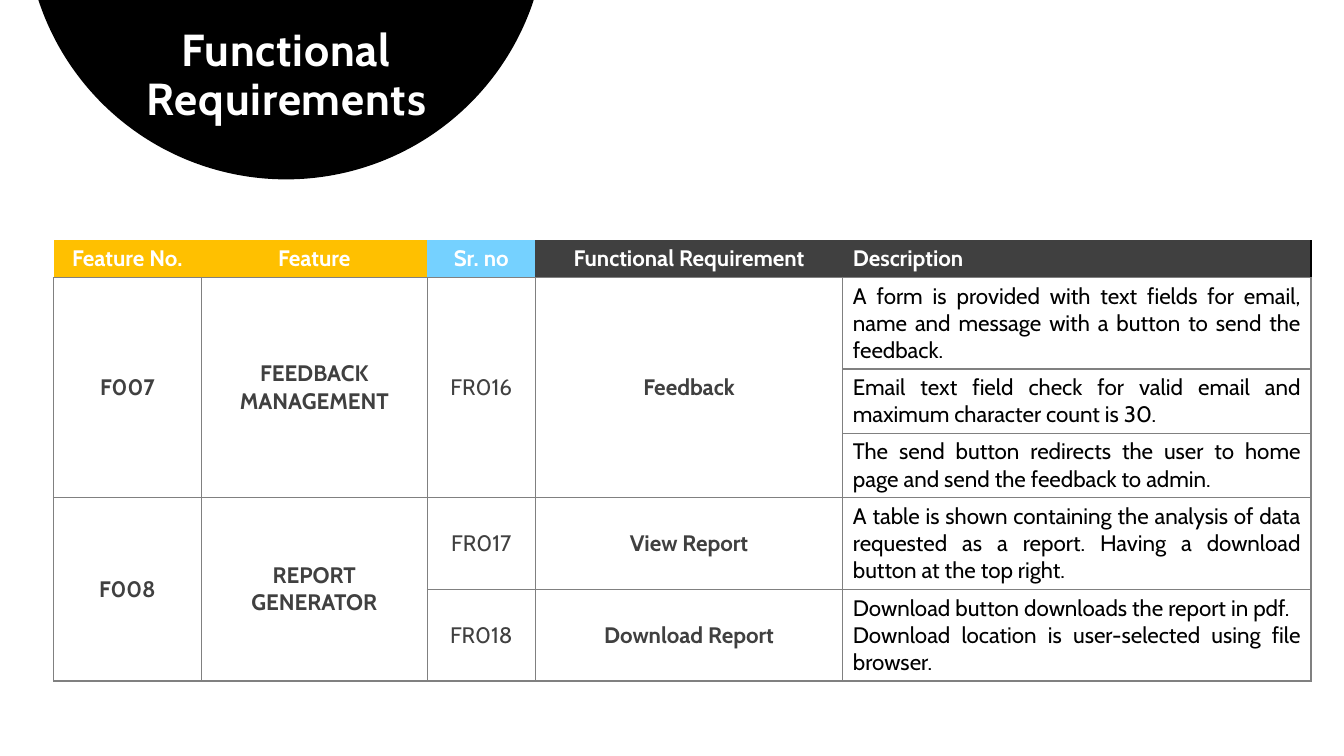
from dataclasses import dataclass

from lxml import etree
from pptx import Presentation
from pptx.dml.color import RGBColor
from pptx.enum.shapes import MSO_SHAPE
from pptx.enum.text import MSO_ANCHOR, PP_ALIGN
from pptx.oxml.ns import qn
from pptx.util import Cm, Pt

OVAL = MSO_SHAPE.OVAL
TOP, MIDDLE = MSO_ANCHOR.TOP, MSO_ANCHOR.MIDDLE
CENTER, JUSTIFY = PP_ALIGN.CENTER, PP_ALIGN.JUSTIFY

FONT = "Cabin"
BLACK, WHITE, GREY = "000000", "FFFFFF", "808080"
AMBER, SKY, CHARCOAL = "FFC000", "75D1FF", "404040"

COLUMN_WIDTHS = (3.72, 5.7, 2.72, 7.75, 11.8)
ROW_HEIGHTS = (0.94, 2.31, 1.62, 1.62, 2.31, 2.31)
TABLE_LEFT, TABLE_TOP = 1.35, 6.05
DESCRIPTION_COLUMN = len(COLUMN_WIDTHS) - 1


@dataclass(frozen=True)
class Look:
    color: str
    bold: bool
    align: PP_ALIGN = CENTER
    size: int = 16


@dataclass(frozen=True)
class Entry:
    row: int
    column: int
    text: str
    look: Look
    row_span: int = 1


HEADING = Look(WHITE, True)
LABEL = Look(CHARCOAL, True)
SERIAL = Look(CHARCOAL, False)
DESCRIPTION = Look(BLACK, False, JUSTIFY)
TITLE = Look(WHITE, True, size=32)

HEADINGS = (
    ("Feature No.", AMBER),
    ("Feature", AMBER),
    ("Sr. no", SKY),
    ("Functional Requirement", CHARCOAL),
    ("Description", CHARCOAL),
)
REQUIREMENTS = (
    Entry(1, 0, "F007", LABEL, 3),
    Entry(1, 1, "FEEDBACK MANAGEMENT", LABEL, 3),
    Entry(1, 2, "FR016", SERIAL, 3),
    Entry(1, 3, "Feedback", LABEL, 3),
    Entry(4, 0, "F008", LABEL, 2),
    Entry(4, 1, "REPORT GENERATOR", LABEL, 2),
    Entry(4, 2, "FR017", SERIAL),
    Entry(4, 3, "View Report", LABEL),
    Entry(5, 2, "FR018", SERIAL),
    Entry(5, 3, "Download Report", LABEL),
)
DESCRIPTIONS = (
    "A form is provided with text fields for email, name and message "
    "with a button to send the feedback.",
    "Email text field check for valid email and maximum character count is 30.",
    "The send button redirects the user to home page and send the feedback to admin.",
    "A table is shown containing the analysis of data requested as a report. "
    "Having a download button at the top right.",
    "Download button downloads the report in pdf.\n"
    "Download location is user-selected using file browser.",
)


def rgb(value: str) -> RGBColor:
    return RGBColor.from_string(value)


def write(frame, text: str, look: Look) -> None:
    frame.text = text
    font_format = {"name": FONT, "size": Pt(look.size), "bold": look.bold}
    for paragraph in frame.paragraphs:
        paragraph.alignment = look.align
        for run in paragraph.runs:
            for attribute, value in font_format.items():
                setattr(run.font, attribute, value)
            run.font.color.rgb = rgb(look.color)


def style_cell(cell, fill: str, borders: dict[str, str]) -> None:
    """Fill a cell and draw the given sides; the other sides get no line."""
    properties = cell._tc.get_or_add_tcPr()
    for side in "LRTB":
        line = etree.SubElement(properties, qn(f"a:ln{side}"), w=str(Pt(1)))
        if side in borders:
            solid = etree.SubElement(line, qn("a:solidFill"))
            etree.SubElement(solid, qn("a:srgbClr"), val=borders[side])
        else:
            etree.SubElement(line, qn("a:noFill"))
    cell.fill.solid()
    cell.fill.fore_color.rgb = rgb(fill)
    cell.vertical_anchor = MIDDLE


def add_title(slide) -> None:
    disc = slide.shapes.add_shape(OVAL, Cm(0.64), Cm(-8.62), Cm(13.14), Cm(13.14))
    disc.shadow.inherit = False
    disc.fill.solid()
    disc.fill.fore_color.rgb = rgb(BLACK)
    disc.line.fill.background()

    title = slide.shapes.add_textbox(Cm(1.55), Cm(-0.46), Cm(11.35), Cm(3.76))
    frame_format = {
        "word_wrap": True,
        "vertical_anchor": TOP,
        "margin_left": Cm(0.4),
        "margin_right": Cm(0.4),
        "margin_top": Cm(1.17),
        "margin_bottom": Cm(0.13),
    }
    for attribute, value in frame_format.items():
        setattr(title.text_frame, attribute, value)
    write(title.text_frame, "Functional Requirements", TITLE)
    paragraph = title.text_frame.paragraphs[0]
    paragraph.line_spacing = 0.9
    paragraph.runs[0].font._element.set("spc", "60")


def add_requirements(slide) -> None:
    table = slide.shapes.add_table(
        len(ROW_HEIGHTS), len(COLUMN_WIDTHS), Cm(TABLE_LEFT), Cm(TABLE_TOP),
        Cm(sum(COLUMN_WIDTHS)), Cm(sum(ROW_HEIGHTS)),
    ).table
    table.horz_banding = False
    for column, width in zip(table.columns, COLUMN_WIDTHS):
        column.width = Cm(width)
    for row, height in zip(table.rows, ROW_HEIGHTS):
        row.height = Cm(height)

    for column, (heading, fill) in enumerate(HEADINGS):
        is_last = column == DESCRIPTION_COLUMN
        borders = {"B": GREY, "R": BLACK} if is_last else {"B": GREY}
        look = Look(WHITE, True, JUSTIFY) if is_last else HEADING
        style_cell(table.cell(0, column), fill, borders)
        write(table.cell(0, column).text_frame, heading, look)

    for row in range(1, len(ROW_HEIGHTS)):
        for column in range(len(COLUMN_WIDTHS)):
            style_cell(table.cell(row, column), WHITE, dict.fromkeys("LRTB", GREY))

    descriptions = tuple(
        Entry(row, DESCRIPTION_COLUMN, text, DESCRIPTION)
        for row, text in enumerate(DESCRIPTIONS, start=1)
    )
    for entry in REQUIREMENTS + descriptions:
        cell = table.cell(entry.row, entry.column)
        if entry.row_span > 1:
            cell.merge(table.cell(entry.row + entry.row_span - 1, entry.column))
        write(cell.text_frame, entry.text, entry.look)


def main() -> None:
    presentation = Presentation()
    presentation.slide_width = Cm(33.87)
    presentation.slide_height = Cm(19.05)
    slide = presentation.slides.add_slide(presentation.slide_layouts[6])
    add_title(slide)
    add_requirements(slide)
    presentation.save("out.pptx")


if __name__ == "__main__":
    main()
